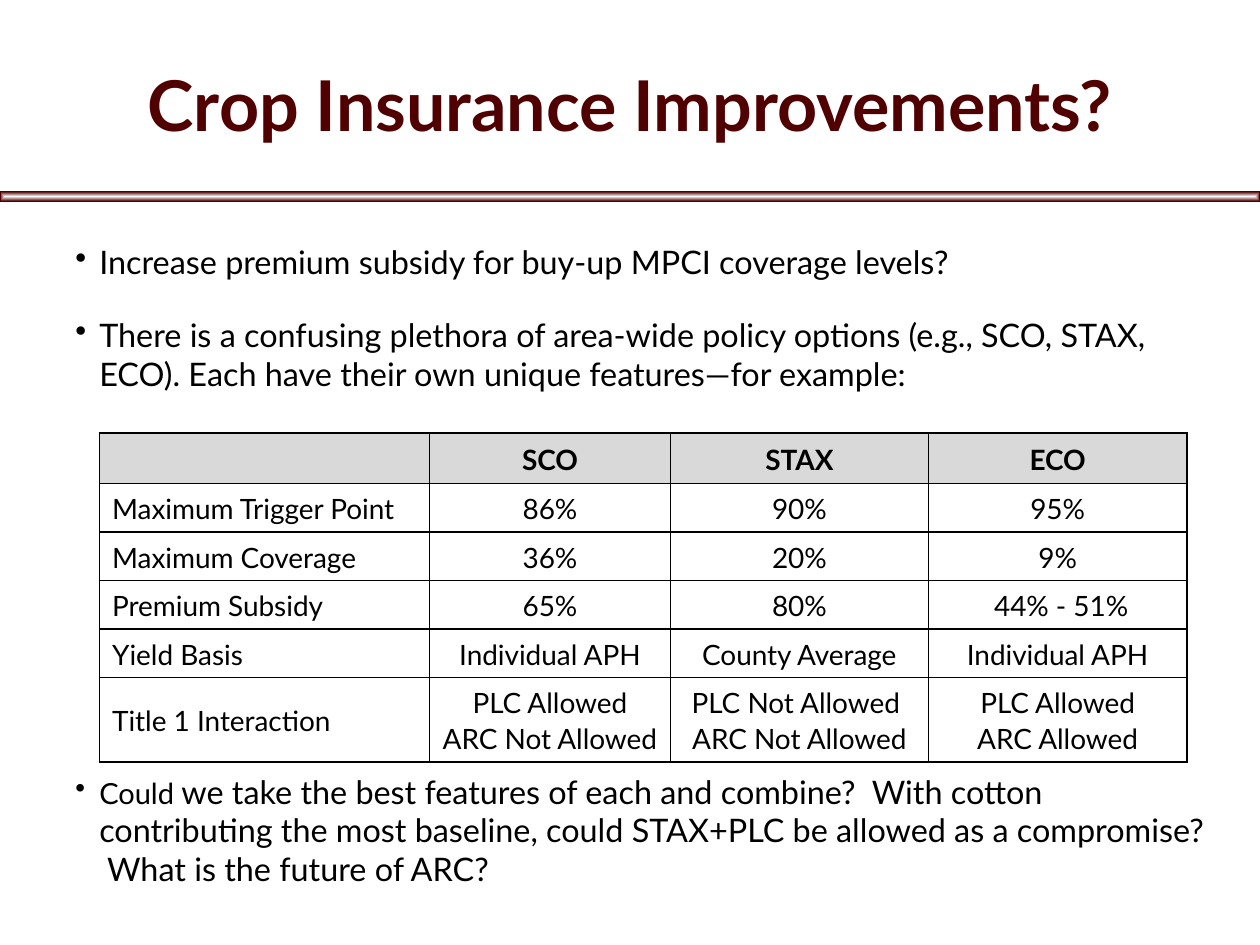
from lxml.etree import SubElement
from pptx import Presentation
from pptx.dml.color import RGBColor
from pptx.enum.shapes import MSO_SHAPE as Shape
from pptx.enum.text import MSO_ANCHOR as Anchor, PP_ALIGN as Align
from pptx.oxml import parse_xml
from pptx.oxml.ns import nsdecls, qn
from pptx.util import Inches, Pt

MAROON = RGBColor(0x50, 0x00, 0x00)
BLACK = RGBColor(0x00, 0x00, 0x00)
HEADER_GREY = RGBColor(0xD9, 0xD9, 0xD9)
RULE_STOPS = [
    (0, RGBColor(0xFF, 0xFF, 0xFF)),
    (11, RGBColor(0xEC, 0xE3, 0xE3)),
    (18, RGBColor(0xE0, 0xD1, 0xD1)),
    (100, MAROON),
]

OPENING_POINTS = [
    [("Increase premium subsidy for buy-up MPCI coverage levels?", 18.5)],
    [("There is a confusing plethora of area-wide policy options (e.g., SCO, "
      "STAX, ECO). Each have their own unique features—for example:", 18.5)],
]
CLOSING_POINTS = [
    [("Could ", 16.6),
     ("we take the best features of each and combine?  With cotton "
      "contributing the most baseline, could STAX+PLC be allowed as a "
      "compromise?  What is the future of ARC?", 18.5)],
]
POLICIES = [
    ["", "SCO", "STAX", "ECO"],
    ["Maximum Trigger Point", "86%", "90%", "95%"],
    ["Maximum Coverage", "36%", "20%", "9%"],
    ["Premium Subsidy", "65%", "80%", " 44% - 51%"],
    ["Yield Basis", "Individual APH", "County Average", "Individual APH"],
    ["Title 1 Interaction", "PLC Allowed\nARC Not Allowed",
     "PLC Not Allowed \nARC Not Allowed", "PLC Allowed\nARC Allowed"],
]
COLUMN_WIDTHS = [2.62, 1.91, 2.05, 2.05]
ROW_HEIGHTS = [0.38] * 5 + [0.67]


def write(paragraph, text, size, color=BLACK, bold=False, font="Lato",
          align=Align.LEFT, spacing=1.0):
    """Append one formatted run and set the paragraph's layout."""
    run = paragraph.add_run()
    run.text = text
    run.font.name, run.font.size, run.font.bold = font, Pt(size), bold
    run.font.color.rgb = color
    paragraph.alignment, paragraph.line_spacing = align, spacing


def hang_bullet(paragraph, indent=Inches(0.19)):
    properties = paragraph._p.get_or_add_pPr()
    properties.set("marL", str(indent))
    properties.set("indent", str(-indent))
    SubElement(properties, qn("a:buChar")).set("char", "•")


def outline_cell(cell, width=Pt(1)):
    properties = cell._tc.get_or_add_tcPr()
    for position, side in enumerate(("lnL", "lnR", "lnT", "lnB")):
        properties.insert(position, parse_xml(
            f'<a:{side} {nsdecls("a")} w="{width}"><a:solidFill>'
            f'<a:srgbClr val="{BLACK}"/></a:solidFill></a:{side}>'))


class Deck:
    """Holds the current slide; positions are shares of the slide's size."""

    def __init__(self, width=10, height=7.5):
        self.file = Presentation()
        self.file.slide_width = Inches(width)
        self.file.slide_height = Inches(height)
        self.slide = self.file.slides.add_slide(self.file.slide_layouts[6])

    def area(self, left, top, width, height):
        across, down = self.file.slide_width, self.file.slide_height
        return (int(left * across), int(top * down),
                int(width * across), int(height * down))

    def text_frame(self, area, anchor=Anchor.TOP):
        frame = self.slide.shapes.add_textbox(*self.area(*area)).text_frame
        frame.word_wrap, frame.vertical_anchor = True, anchor
        return frame

    def title(self, text, *area):
        frame = self.text_frame(area, Anchor.MIDDLE)
        write(frame.paragraphs[0], text, 40, color=MAROON, bold=True,
              align=Align.CENTER, spacing=0.9)

    def bullets(self, points, *area):
        frame = self.text_frame(area)
        for index, runs in enumerate(points):
            paragraph = frame.add_paragraph() if index else frame.paragraphs[0]
            hang_bullet(paragraph)
            paragraph.space_before = Pt(7.5 if index else 0)
            paragraph.space_after = Pt(12)
            for text, size in runs:
                write(paragraph, text, size)

    def rule(self, *area):
        """Bar that shades from a light centre to dark edges."""
        bar = self.slide.shapes.add_shape(Shape.RECTANGLE, *self.area(*area))
        bar.shadow.inherit = False
        bar.line.color.rgb, bar.line.width = MAROON, Pt(0.75)
        stops = "".join(
            f'<a:gs pos="{share * 1000}"><a:srgbClr val="{color}"/></a:gs>'
            for share, color in RULE_STOPS)
        bar._element.spPr.find(qn("a:prstGeom")).addnext(parse_xml(
            f'<a:gradFill {nsdecls("a")} rotWithShape="1">'
            f'<a:gsLst>{stops}</a:gsLst><a:path path="rect">'
            '<a:fillToRect l="50000" t="50000" r="50000" b="50000"/>'
            '</a:path></a:gradFill>'))

    def table(self, rows, widths, heights, *area):
        table = self.slide.shapes.add_table(
            len(rows), len(widths), *self.area(*area)).table
        for column, width in zip(table.columns, widths):
            column.width = Inches(width)
        for row, height in zip(table.rows, heights):
            row.height = Inches(height)
        for r, row in enumerate(rows):
            for c, text in enumerate(row):
                self.fill_cell(table.cell(r, c), text, is_header=r == 0,
                               is_label=c == 0, is_tight=c % 2 == 1)

    def fill_cell(self, cell, text, is_header, is_label, is_tight):
        if is_header:
            cell.fill.solid()
            cell.fill.fore_color.rgb = HEADER_GREY
        else:
            cell.fill.background()
        outline_cell(cell)
        cell.vertical_anchor = Anchor.MIDDLE
        if is_tight:
            cell.margin_left = cell.margin_right = 0
            cell.margin_top = cell.margin_bottom = 0
        frame = cell.text_frame
        for index, line in enumerate(text.split("\n")):
            paragraph = frame.add_paragraph() if index else frame.paragraphs[0]
            write(paragraph, line, 16, bold=is_header, spacing=1.07,
                  align=Align.LEFT if is_label else Align.CENTER)


def main():
    deck = Deck()
    deck.title("Crop Insurance Improvements?", 0, 0.02, 1, 0.19)
    deck.bullets(OPENING_POINTS, 0.05, 0.25, 0.92, 0.2)
    deck.bullets(CLOSING_POINTS, 0.05, 0.81, 0.92, 0.17)
    deck.rule(0, 0.203, 1, 0.01)
    deck.table(POLICIES, COLUMN_WIDTHS, ROW_HEIGHTS, 0.079, 0.458, 0.865, 0.34)
    deck.file.save("out.pptx")


if __name__ == "__main__":
    main()
